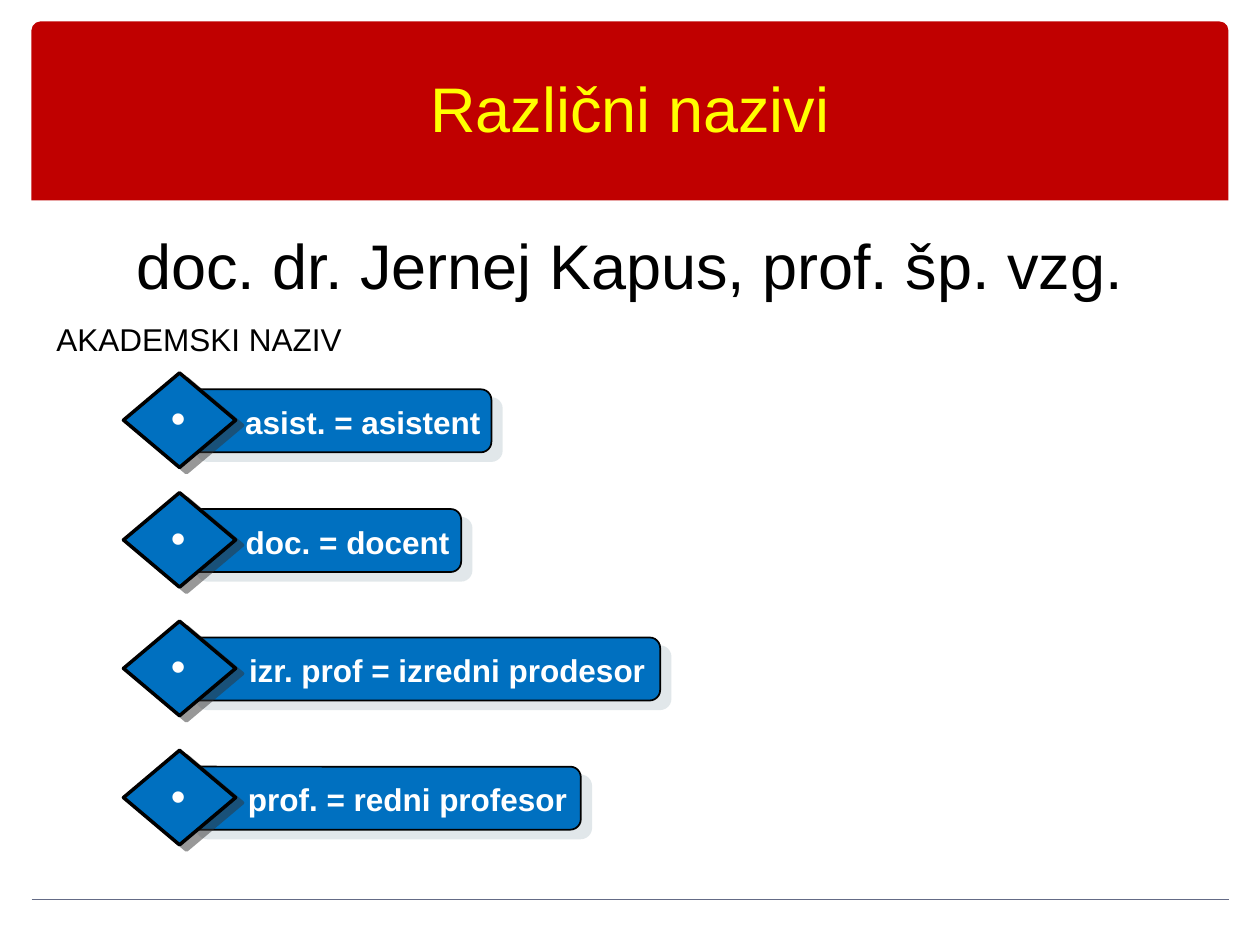
from dataclasses import dataclass

from lxml import etree
from pptx import Presentation
from pptx.dml.color import RGBColor
from pptx.enum.shapes import MSO_CONNECTOR, MSO_SHAPE
from pptx.enum.text import MSO_ANCHOR, PP_ALIGN
from pptx.oxml.ns import qn
from pptx.util import Emu, Inches, Pt

STRAIGHT = MSO_CONNECTOR.STRAIGHT
BANNER, BAR, DIAMOND = (MSO_SHAPE.ROUND_2_SAME_RECTANGLE,
                        MSO_SHAPE.ROUNDED_RECTANGLE, MSO_SHAPE.DIAMOND)
LEFT, CENTER = PP_ALIGN.LEFT, PP_ALIGN.CENTER
TOP, MIDDLE = MSO_ANCHOR.TOP, MSO_ANCHOR.MIDDLE

RED = RGBColor(0xC0, 0x00, 0x00)
YELLOW = RGBColor(0xFF, 0xFF, 0x00)
BLUE = RGBColor(0x00, 0x70, 0xC0)
BLACK = RGBColor(0x00, 0x00, 0x00)
WHITE = RGBColor(0xFF, 0xFF, 0xFF)
SLATE = RGBColor(0x64, 0x6B, 0x86)
PALE_SHADOW = RGBColor(0xC5, 0xD1, 0xD7)
DARK_SHADOW = RGBColor(0x33, 0x33, 0x33)

FONT = "Arial"
COLUMNS, ROWS = 100, 75
CELL = Inches(10) // COLUMNS


@dataclass(frozen=True)
class Box:
    """A rectangle in grid columns and rows."""
    column: float
    row: float
    columns: float
    rows: float

    def lengths(self) -> list[Emu]:
        return [cells(n) for n in (self.column, self.row, self.columns, self.rows)]


@dataclass(frozen=True)
class Shadow:
    color: RGBColor
    distance: float
    angle: float


@dataclass(frozen=True)
class Rank:
    text: str
    row: float
    bar_columns: float


BAR_SHADOW = Shadow(PALE_SHADOW, 7.8, 40)
DIAMOND_SHADOW = Shadow(DARK_SHADOW, 5, 37)
RANKS = [
    Rank("asist. = asistent", 29.6, 24.2),
    Rank("doc. = docent", 39.1, 21.8),
    Rank("izr. prof = izredni prodesor", 49.3, 37.6),
    Rank("prof. = redni profesor", 59.55, 31.3),
]


def cells(count: float) -> Emu:
    return Emu(round(count * CELL))


def add_shadow(shape, shadow: Shadow) -> None:
    effects = shape._element.spPr.find(qn("a:effectLst"))
    outer = etree.SubElement(effects, qn("a:outerShdw"), blurRad="0",
                             dist=str(Pt(shadow.distance)),
                             dir=str(round(shadow.angle * 60000)),
                             algn="ctr", rotWithShape="0")
    color = etree.SubElement(outer, qn("a:srgbClr"), val=str(shadow.color))
    etree.SubElement(color, qn("a:alpha"), val="50000")


def add_filled(slide, kind, box: Box, fill: RGBColor, line_width: float = 0,
               shadow: Shadow | None = None):
    shape = slide.shapes.add_shape(kind, *box.lengths())
    shape.shadow.inherit = False
    shape.fill.solid()
    shape.fill.fore_color.rgb = fill
    if line_width:
        shape.line.color.rgb = BLACK
        shape.line.width = Pt(line_width)
    else:
        shape.line.fill.background()
    if shadow:
        add_shadow(shape, shadow)
    return shape


def add_text(slide, text: str, box: Box, *, size: float, color: RGBColor,
             bold: bool = False, align=CENTER, anchor=TOP, wrap: bool = True,
             space_before: float = 0) -> None:
    frame = slide.shapes.add_textbox(*box.lengths()).text_frame
    frame.word_wrap = wrap
    frame.vertical_anchor = anchor
    paragraph = frame.paragraphs[0]
    paragraph.alignment = align
    paragraph.space_before = Pt(space_before)
    run = paragraph.add_run()
    run.text = text
    run.font.name = FONT
    run.font.size = Pt(size)
    run.font.bold = bold
    run.font.color.rgb = color


def add_footer_rule(slide) -> None:
    rule = slide.shapes.add_connector(STRAIGHT, cells(2.5), cells(71.4),
                                      cells(COLUMNS - 2.5), cells(71.4))
    rule.line.color.rgb = SLATE
    rule.line.width = Pt(1)
    etree.SubElement(rule._element.spPr, qn("a:effectLst"))


def add_rank(slide, rank: Rank) -> None:
    """Draw a labelled bar with a bulleted diamond over its left end."""
    bar = Box(14.8, rank.row + 1.3, rank.bar_columns, 5)
    add_filled(slide, BAR, bar, BLUE, 1, BAR_SHADOW)
    add_filled(slide, DIAMOND, Box(9.8, rank.row, 8.9, 7.5), BLUE, 2, DIAMOND_SHADOW)
    add_text(slide, rank.text, Box(17.8, rank.row + 1.9, rank.bar_columns - 2.2, 4),
             size=18, color=WHITE, bold=True)
    add_text(slide, "•", Box(12.4, rank.row + 1, 3.5, 5),
             size=24, color=WHITE, wrap=False)


def main() -> None:
    presentation = Presentation()
    presentation.slide_width = cells(COLUMNS)
    presentation.slide_height = cells(ROWS)
    slide = presentation.slides.add_slide(presentation.slide_layouts[6])

    banner = add_filled(slide, BANNER, Box(2.5, 1.7, 95, 14.2), RED)
    banner.adjustments[0] = 0.05
    add_footer_rule(slide)
    add_text(slide, "Različni nazivi", Box(5, 1.7, 90, 13.7),
             size=36, color=YELLOW, anchor=MIDDLE)
    add_text(slide, "doc. dr. Jernej Kapus, prof. šp. vzg.", Box(5, 17.5, 90, 8.2),
             size=36, color=BLACK, space_before=4)
    add_text(slide, "AKADEMSKI NAZIV", Box(3.5, 24.9, 24.7, 4),
             size=18, color=BLACK, align=LEFT, wrap=False)
    for rank in RANKS:
        add_rank(slide, rank)

    presentation.save("out.pptx")


if __name__ == "__main__":
    main()
